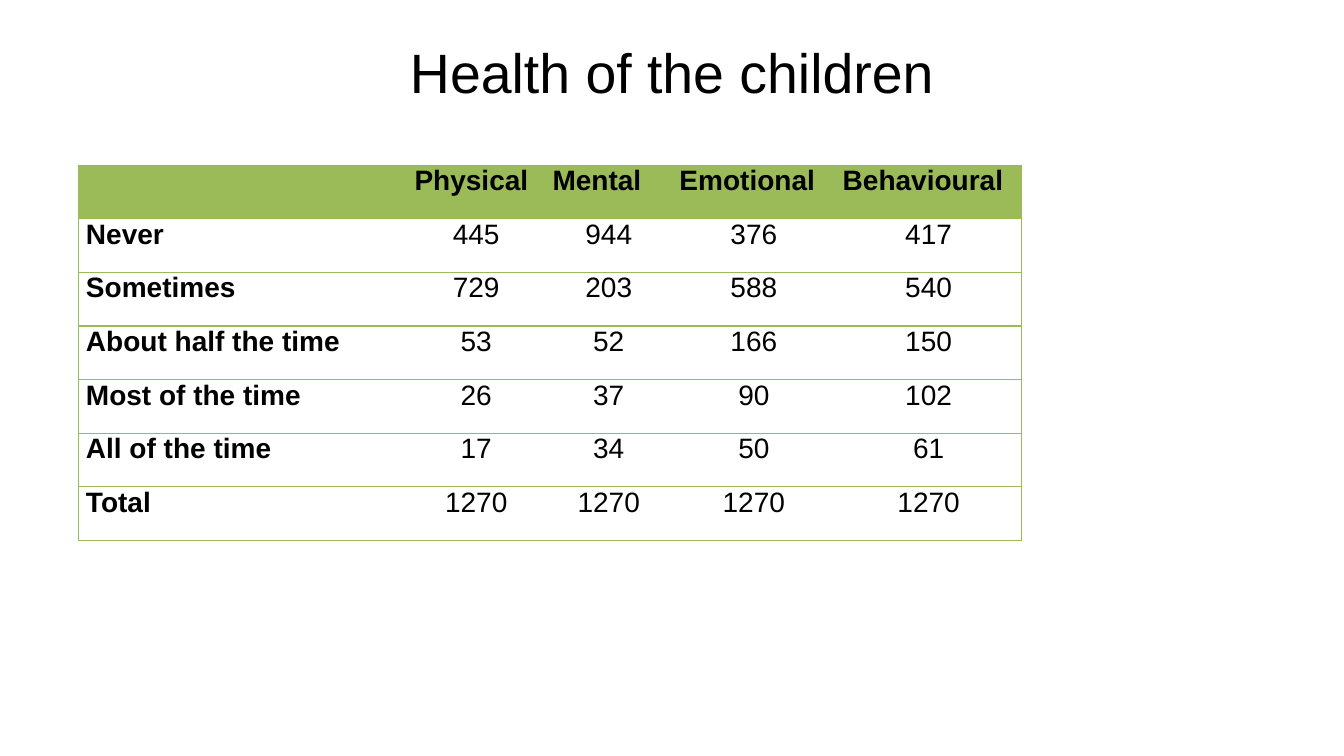
from lxml import etree
from pptx import Presentation
from pptx import util as u
from pptx.dml.color import RGBColor
from pptx.enum import text
from pptx.oxml import ns

FONT = "Arial"
BLACK = "000000"
GREEN = "9BBB59"

HEADINGS = ["", "Physical", "Mental", "Emotional", "Behavioural"]
FREQUENCIES = [
    ["Never", 445, 944, 376, 417],
    ["Sometimes", 729, 203, 588, 540],
    ["About half the time", 53, 52, 166, 150],
    ["Most of the time", 26, 37, 90, 102],
    ["All of the time", 17, 34, 50, 61],
    ["Total", 1270, 1270, 1270, 1270],
]
COLUMN_WIDTHS = [234.7, 98.6, 90.7, 116.6, 133.2]
ROW_HEIGHT = 38.3


def color(value):
    return RGBColor.from_string(value)


def write(frame, content, size, bold=False, centered=False):
    paragraph = frame.paragraphs[0]
    paragraph.alignment = text.PP_ALIGN.CENTER if centered else text.PP_ALIGN.LEFT
    paragraph.font.size = u.Pt(size)
    if content:
        run = paragraph.add_run()
        run.text = content
        run.font.name = FONT
        run.font.size = u.Pt(size)
        run.font.bold = bold
        run.font.color.rgb = color(BLACK)


def add_title(slide, content):
    box = slide.shapes.add_textbox(u.Pt(48), u.Pt(21.6), u.Pt(864), u.Pt(59))
    frame = box.text_frame
    frame.word_wrap = True
    frame.vertical_anchor = text.MSO_ANCHOR.MIDDLE
    write(frame, content, 39.6, centered=True)


def set_borders(cell, visible_sides):
    properties = cell._tc.get_or_add_tcPr()
    for side in "LRTB":
        line = etree.SubElement(properties, ns.qn(f"a:ln{side}"), w=str(u.Pt(1)))
        if side in visible_sides:
            fill = etree.SubElement(line, ns.qn("a:solidFill"))
            etree.SubElement(fill, ns.qn("a:srgbClr"), val=GREEN)
        else:
            etree.SubElement(line, ns.qn("a:noFill"))


def format_cell(cell, content, row, column, last_column):
    cell.margin_left = cell.margin_right = u.Pt(5.2)
    cell.margin_top = cell.margin_bottom = 0
    cell.vertical_anchor = text.MSO_ANCHOR.TOP
    is_header = row == 0
    is_label = column == 0
    write(cell.text_frame, str(content), 20,
          bold=is_header or is_label, centered=not (is_header or is_label))

    # Rules run between rows; only the outer edges have vertical lines
    sides = "TB"
    if is_label:
        sides += "L"
    if column == last_column:
        sides += "R"
    set_borders(cell, sides)

    if is_header:
        cell.fill.solid()
        cell.fill.fore_color.rgb = color(GREEN)
    else:
        cell.fill.background()


def add_health_table(slide):
    rows = [HEADINGS] + FREQUENCIES
    frame = slide.shapes.add_table(
        len(rows), len(HEADINGS), u.Pt(56.2), u.Pt(118),
        u.Pt(sum(COLUMN_WIDTHS)), u.Pt(ROW_HEIGHT * len(rows)))
    table = frame.table
    table.horz_banding = False
    table.first_row = False
    for column, width in zip(table.columns, COLUMN_WIDTHS):
        column.width = u.Pt(width)
    for row, values in enumerate(rows):
        table.rows[row].height = u.Pt(ROW_HEIGHT)
        for column, value in enumerate(values):
            format_cell(table.cell(row, column), value, row, column, len(values) - 1)


def main():
    presentation = Presentation()
    presentation.slide_width = u.Pt(960)
    presentation.slide_height = u.Pt(540)
    slide = presentation.slides.add_slide(presentation.slide_layouts[6])

    # Heading
    add_title(slide, "Health of the children")

    # Frequencies by kind of health
    add_health_table(slide)

    presentation.save("out.pptx")


if __name__ == "__main__":
    main()
